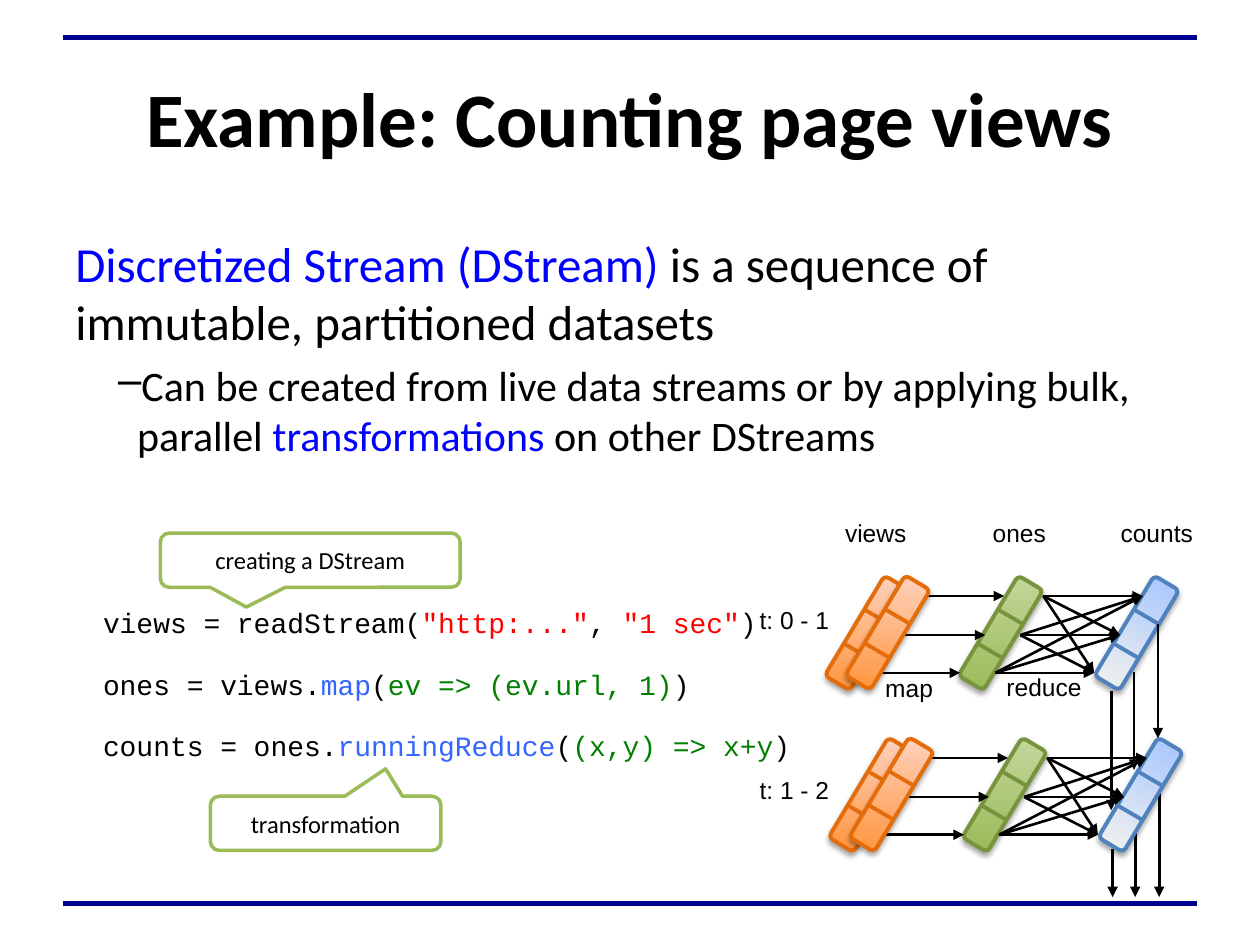
from itertools import product

from lxml import etree
from pptx import Presentation
from pptx.dml.color import RGBColor
from pptx.enum.shapes import MSO_CONNECTOR, MSO_SHAPE
from pptx.enum.text import MSO_ANCHOR, MSO_AUTO_SIZE, PP_ALIGN
from pptx.oxml.ns import qn
from pptx.util import Pt

STRAIGHT = MSO_CONNECTOR.STRAIGHT
CALLOUT = MSO_SHAPE.ROUNDED_RECTANGULAR_CALLOUT
PARTITIONS = MSO_SHAPE.FLOWCHART_ALTERNATE_PROCESS
CENTER = PP_ALIGN.CENTER
TOP, MIDDLE = MSO_ANCHOR.TOP, MSO_ANCHOR.MIDDLE
NO_AUTOSIZE = MSO_AUTO_SIZE.NONE

BLACK, NAVY, BLUE, RED = "000000", "000090", "0000FF", "FF0000"
METHOD, LAMBDA, CALLOUT_GREEN = "3366FF", "008000", "9BBB59"

# Gradient start, gradient end, line, gradient follows the long side
VIEWS = ("FF953E", "FFD2BD", "E46C0A", False)
ONES = ("9BBB59", "C3D69B", "77933C", False)
COUNTS = ("F5F4ED", "A4C4FF", "4F81BD", True)

ROWS = (340.6, 362.9, 384.5)
VIEW_EXITS = list(zip((517, 504.7, 492.5), ROWS))
ONE_ENTRIES = list(zip((573.8, 563, 548.6), ROWS))
ONE_EXITS = list(zip((596.2, 583, 568.8), ROWS))
COUNT_ENTRIES = list(zip((653, 640, 625.2), ROWS))
STAGES = ((0, 0), (2.2, 92.5))


def color(value):
    return RGBColor.from_string(value)


def box_at(left, top, width, height):
    return Pt(left), Pt(top), Pt(width), Pt(height)


def add_line(page, start, end, line_color, width):
    line = page.shapes.add_connector(STRAIGHT, *box_at(*start, *end))
    line.line.color.rgb = color(line_color)
    line.line.width = Pt(width)
    etree.SubElement(line._element.spPr, qn("a:effectLst"))
    return line


def add_arrow(page, start, end):
    arrow = add_line(page, start, end, BLACK, 1.5)
    etree.SubElement(arrow.line._get_or_add_ln(), qn("a:tailEnd"), type="triangle")


def set_frame(frame, insets, anchor=TOP, wrap=True):
    """Insets are the horizontal and the vertical one."""
    frame.margin_left = frame.margin_right = Pt(insets[0])
    frame.margin_top = frame.margin_bottom = Pt(insets[1])
    frame.vertical_anchor = anchor
    frame.word_wrap = wrap
    frame.auto_size = NO_AUTOSIZE


def format_span(span, font, size, font_color=BLACK, bold=False):
    span.font.name = font
    span.font.size = Pt(size)
    span.font.bold = bold
    span.font.color.rgb = color(font_color)


def set_centered_text(frame, text, font, size, bold=False):
    frame.text = text
    para = frame.paragraphs[0]
    para.alignment = CENTER
    format_span(para.runs[0], font, size, bold=bold)


def add_spans(para, spans, font, size, space_before=0):
    para.space_before = Pt(space_before)
    for text, font_color in spans:
        span = para.add_run()
        span.text = text
        format_span(span, font, size, font_color)


def add_dash_bullet(para, left, indent):
    properties = para._p.get_or_add_pPr()
    properties.set("marL", str(Pt(left)))
    properties.set("indent", str(Pt(indent)))
    bullet_color = etree.SubElement(properties, qn("a:buClr"))
    etree.SubElement(bullet_color, qn("a:srgbClr"), val=BLACK)
    etree.SubElement(properties, qn("a:buChar"), char="–")


def add_title(page):
    title = page.shapes.title
    title.left, title.top, title.width, title.height = box_at(36, 21.6, 648, 90)
    set_frame(title.text_frame, (7.2, 7.2), MIDDLE)
    set_centered_text(title.text_frame, "Example: Counting page views", "Calibri", 44, True)


def add_definition(page):
    frame = page.shapes.add_textbox(*box_at(36, 126, 648, 147)).text_frame
    set_frame(frame, (7.2, 7.2))
    add_spans(frame.paragraphs[0], [
        ("Discretized Stream (DStream)", BLUE),
        (" is a sequence of immutable, partitioned datasets", BLACK),
    ], "Calibri", 28, 5.6)
    detail = frame.add_paragraph()
    add_spans(detail, [
        ("Can be created from live data streams or by applying bulk, parallel ", BLACK),
        ("transformations ", BLUE),
        ("on other DStreams", BLACK),
    ], "Calibri", 24, 4.8)
    add_dash_bullet(detail, 35.3, -10.8)


def add_code(page):
    frame = page.shapes.add_textbox(*box_at(51.8, 342.7, 458, 100)).text_frame
    set_frame(frame, (7.2, 3.6))
    lines = (
        [("views = readStream(", BLACK), ('"http:..."', RED), (", ", BLACK),
         ('"1 sec"', RED), (")", BLACK)],
        [("ones = views.", BLACK), ("map", METHOD), ("(", BLACK),
         ("ev => (ev.url, 1)", LAMBDA), (")", BLACK)],
        [("counts = ones.", BLACK), ("runningReduce", METHOD), ("(", BLACK),
         ("(x,y) => x+y", LAMBDA), (")", BLACK)],
    )
    for number, spans in enumerate(lines):
        para = frame.add_paragraph() if number else frame.paragraphs[0]
        add_spans(para, spans, "Courier New", 16, 15.8 if number else 0)


def add_callout(page, text, box, pointer):
    callout = page.shapes.add_shape(CALLOUT, *box_at(*box))
    callout.adjustments[0], callout.adjustments[1] = pointer
    callout.shadow.inherit = False
    callout.fill.solid()
    callout.fill.fore_color.rgb = color("FFFFFF")
    callout.line.color.rgb = color(CALLOUT_GREEN)
    callout.line.width = Pt(2)
    set_frame(callout.text_frame, (0, 3.6), MIDDLE)
    set_centered_text(callout.text_frame, text, "Calibri", 14)


def add_label(page, text, left, top, width):
    frame = page.shapes.add_textbox(*box_at(left, top, width, 21.6)).text_frame
    set_frame(frame, (7.2, 0), wrap=False)
    set_centered_text(frame, text, "Arial", 14)


def add_soft_shadow(shape):
    shape.shadow.inherit = False
    effects = shape._element.spPr.find(qn("a:effectLst"))
    shadow = etree.SubElement(effects, qn("a:outerShdw"), blurRad=str(Pt(3.1)),
                              dist=str(Pt(1.8)), dir="5400000", rotWithShape="0")
    shade = etree.SubElement(shadow, qn("a:srgbClr"), val=BLACK)
    etree.SubElement(shade, qn("a:alpha"), val="35000")


def add_dataset(page, left, top, style):
    """A tilted block that two lines divide into three partitions."""
    start_color, end_color, line_color, along = style
    block = page.shapes.add_shape(PARTITIONS, *box_at(left, top, 66.6, 16.6))
    block.rotation = 300.9
    block.fill.gradient()
    block.fill.gradient_angle = 0 if along else 90
    for stop, stop_color in zip(block.fill.gradient_stops, (start_color, end_color)):
        stop.color.rgb = color(stop_color)
    gradient = block._element.spPr.find(qn("a:gradFill"))
    gradient.set("rotWithShape", "1" if along else "0")
    block.line.color.rgb = color(line_color)
    block.line.width = Pt(2.25)
    add_soft_shadow(block)
    for x, y in ((32.2, -4.8), (20.2, 14.4)):
        add_line(page, (left + x, top + y), (left + x + 14, top + y + 8.2), line_color, 2.25)


def add_stage(page, shift_x, shift_y):
    for left, style in ((462.2, VIEWS), (616.3, COUNTS), (538.6, ONES)):
        add_dataset(page, left + shift_x, 353.4 + shift_y, style)
    map_links = list(zip(VIEW_EXITS, ONE_ENTRIES))
    reduce_links = list(product(ONE_EXITS, COUNT_ENTRIES))
    for start, end in map_links + reduce_links:
        add_arrow(page, (start[0] + shift_x, start[1] + shift_y),
                  (end[0] + shift_x, end[1] + shift_y))


def add_vertical_arrows(page, arrows):
    for x, top, bottom in arrows:
        add_arrow(page, (x, top), (x, bottom))


def add_dataflow(page):
    add_vertical_arrows(page, ((648.7, 473.8, 512.6), (662.4, 446.4, 512.6),
                               (635.8, 485.3, 512.6)))
    for shift in STAGES:
        add_stage(page, *shift)
    for label in (("views", 472.3, 295.9, 56.2), ("ones", 557.3, 295.9, 50.4),
                  ("counts", 628.6, 295.9, 64.8), ("t: 0 - 1", 424.1, 345.6, 59.8),
                  ("t: 1 - 2", 424.1, 442.8, 59.8), ("map", 495.4, 384.5, 48.2),
                  ("reduce", 563.8, 383.8, 65.5)):
        add_label(page, *label)
    add_vertical_arrows(page, ((648, 383.8, 439.9), (661.7, 356.4, 421.9),
                               (635, 394.6, 463)))
    for shift_x, shift_y in reversed(STAGES):
        add_dataset(page, 474 + shift_x, 353.2 + shift_y, VIEWS)


def main():
    deck = Presentation()
    deck.slide_width, deck.slide_height = Pt(720), Pt(540)
    page = deck.slides.add_slide(deck.slide_layouts[5])
    for y in (21.6, 516.2):
        add_line(page, (36, y), (684, y), NAVY, 3)
    add_title(page)
    add_definition(page)
    add_code(page)
    add_callout(page, "creating a DStream", (91.6, 304.6, 171.4, 31), (-0.213, 0.865))
    add_callout(page, "transformation", (120.2, 455, 131.8, 31), (0.26, -1.004))
    add_dataflow(page)
    deck.save("out.pptx")


if __name__ == "__main__":
    main()
